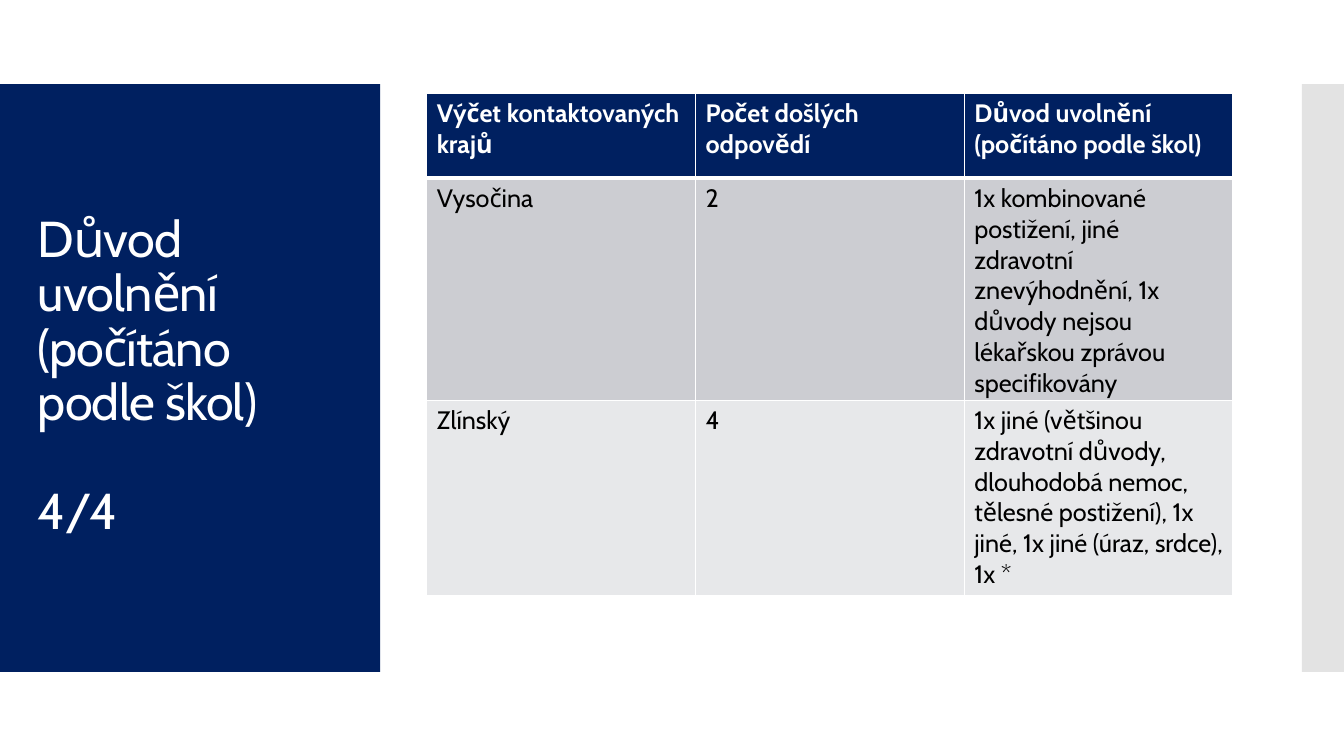
from lxml.etree import SubElement
from pptx import Presentation
from pptx.dml.color import RGBColor
from pptx.enum.shapes import MSO_SHAPE
from pptx.enum.text import MSO_ANCHOR
from pptx.oxml.ns import qn
from pptx.util import Pt

NAVY = RGBColor(0x00, 0x20, 0x60)
WHITE = RGBColor(0xFF, 0xFF, 0xFF)
BLACK = RGBColor(0x00, 0x00, 0x00)
SIDE_GRAY = RGBColor(0xC8, 0xC8, 0xC8)
ROW_DARK = RGBColor(0xCC, 0xCD, 0xD2)
ROW_LIGHT = RGBColor(0xE7, 0xE8, 0xEA)
FONT = "Cabin"

TITLE = ["Důvod uvolnění (počítáno podle škol)", "4/4"]
ROWS = [
    ("Výčet kontaktovaných krajů", "Počet došlých odpovědí",
     "Důvod uvolnění (počítáno podle škol)"),
    ("Vysočina", "2",
     "1x kombinované postižení, jiné zdravotní znevýhodnění, "
     "1x důvody nejsou lékařskou zprávou specifikovány"),
    ("Zlínský", "4",
     "1x jiné (většinou zdravotní důvody, dlouhodobá nemoc, "
     "tělesné postižení), 1x jiné, 1x jiné (úraz, srdce), 1x *"),
]

SLIDE_WIDTH, SLIDE_HEIGHT = 960, 540
BAND_TOP, BAND_HEIGHT = 60, 420
PANEL_WIDTH, SIDE_WIDTH = 271.5, 30
TITLE_BOX = (20, 88.5, 232, 362)
TITLE_GAP = 39
TABLE_LEFT, TABLE_TOP = 304.8, 66.4
COLUMN_WIDTH = 192
ROW_HEIGHTS = (61, 140, 140)
ROW_FILLS = (NAVY, ROW_DARK, ROW_LIGHT)
THIN, THICK = 1, 3


def write(para, text, size=18, color=BLACK, bold=False, tracking=0):
    span = para.add_run()
    span.text = text
    font = span.font
    font.name, font.size, font.bold = FONT, Pt(size), bold
    font.color.rgb = color
    if tracking:
        font._element.set("spc", str(round(tracking * 100)))


def add_block(page, left, width, color, opacity=100):
    block = page.shapes.add_shape(MSO_SHAPE.RECTANGLE, Pt(left), Pt(BAND_TOP),
                                  Pt(width), Pt(BAND_HEIGHT))
    block.shadow.inherit = False
    block.line.fill.background()
    block.fill.solid()
    block.fill.fore_color.rgb = color
    if opacity < 100:
        tint = block._element.spPr.find(f".//{qn('a:srgbClr')}")
        SubElement(tint, qn("a:alpha"), val=str(opacity * 1000))


def add_borders(cell, top, bottom):
    """Draw white cell borders; must run before the cell gets its fill."""
    properties = cell._tc.get_or_add_tcPr()
    for side, width in (("L", THIN), ("R", THIN), ("T", top), ("B", bottom)):
        line = SubElement(properties, qn(f"a:ln{side}"), w=str(Pt(width)))
        fill = SubElement(line, qn("a:solidFill"))
        SubElement(fill, qn("a:srgbClr"), val=str(WHITE))


def add_title(page):
    box = page.shapes.add_textbox(*map(Pt, TITLE_BOX))
    frame = box.text_frame
    frame.word_wrap = True
    frame.vertical_anchor = MSO_ANCHOR.MIDDLE
    for index, text in enumerate(TITLE):
        para = frame.add_paragraph() if index else frame.paragraphs[0]
        para.line_spacing = 0.9
        para.space_before = Pt(TITLE_GAP if index else 0)
        write(para, text, size=36, color=WHITE, tracking=-0.6)


def add_reasons_table(page):
    columns = len(ROWS[0])
    table = page.shapes.add_table(
        len(ROWS), columns, Pt(TABLE_LEFT), Pt(TABLE_TOP),
        Pt(columns * COLUMN_WIDTH), Pt(sum(ROW_HEIGHTS))).table
    for column in table.columns:
        column.width = Pt(COLUMN_WIDTH)
    for r, (texts, height, fill) in enumerate(zip(ROWS, ROW_HEIGHTS, ROW_FILLS)):
        table.rows[r].height = Pt(height)
        header = r == 0
        for c, text in enumerate(texts):
            cell = table.cell(r, c)
            add_borders(cell, top=THICK if r == 1 else THIN,
                        bottom=THICK if header else THIN)
            cell.fill.solid()
            cell.fill.fore_color.rgb = fill
            write(cell.text_frame.paragraphs[0], text,
                  color=WHITE if header else BLACK, bold=header)


def main():
    deck = Presentation()
    deck.slide_width, deck.slide_height = Pt(SLIDE_WIDTH), Pt(SLIDE_HEIGHT)
    page = deck.slides.add_slide(deck.slide_layouts[6])
    add_block(page, 0, PANEL_WIDTH, NAVY)
    add_block(page, SLIDE_WIDTH - SIDE_WIDTH, SIDE_WIDTH, SIDE_GRAY, opacity=50)
    add_title(page)
    add_reasons_table(page)
    deck.save("out.pptx")


if __name__ == "__main__":
    main()
